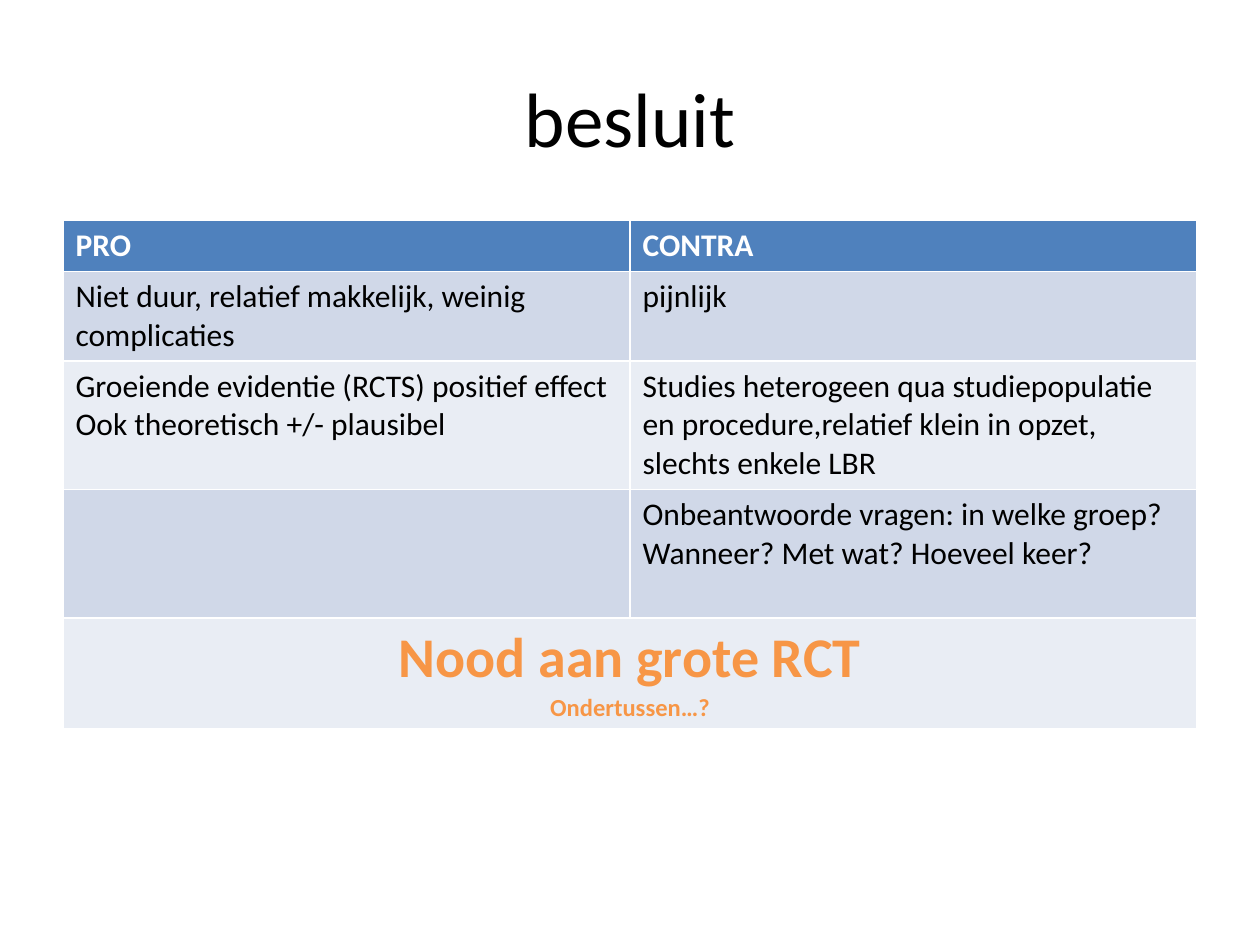
from pptx import Presentation
from pptx.dml.color import RGBColor
from pptx.enum import text
from pptx.util import Inches, Pt

TITLE = "besluit"
ROWS = [
    ("PRO", "CONTRA"),
    ("Niet duur, relatief makkelijk, weinig complicaties", "pijnlijk"),
    ("Groeiende evidentie (RCTS) positief effect\nOok theoretisch +/- plausibel",
     "Studies heterogeen qua studiepopulatie en procedure,relatief klein in opzet, "
     "slechts enkele LBR"),
    ("", "Onbeantwoorde vragen: in welke groep? Wanneer? Met wat? Hoeveel keer?"),
    ("Nood aan grote RCT\nOndertussen…?", ""),
]
HEIGHTS = [0.4, 0.71, 1.02, 1.02, 0.87]
CONCLUSION_SIZES = [32, 14]
COLORS = {"header": "4F81BD", "odd": "D0D8E8", "even": "E9EDF4",
          "white": "FFFFFF", "black": "000000", "accent": "F79646"}
FONT = "Calibri"


def rgb(name):
    return RGBColor.from_string(COLORS[name])


def format_paragraph(p, size, color, bold=False, align=text.PP_ALIGN.LEFT):
    p.alignment = align
    for r in p.runs:
        r.font.name = FONT
        r.font.size = Pt(size)
        r.font.bold = bold
        r.font.color.rgb = rgb(color)


def main():
    prs = Presentation()
    prs.slide_width, prs.slide_height = Inches(10), Inches(7.5)
    s = prs.slides.add_slide(prs.slide_layouts[5])

    title = s.shapes.title
    title.left, title.top = Inches(0.5), Inches(0.3)
    title.width, title.height = Inches(9), Inches(1.25)
    title.text_frame.text = TITLE
    title.text_frame.vertical_anchor = text.MSO_ANCHOR.MIDDLE
    format_paragraph(title.text_frame.paragraphs[0], 44, "black",
                     align=text.PP_ALIGN.CENTER)

    table = s.shapes.add_table(len(ROWS), 2, Inches(0.5), Inches(1.75),
                               Inches(9), Inches(sum(HEIGHTS))).table
    last = len(ROWS) - 1
    table.cell(last, 0).merge(table.cell(last, 1))

    for i, (row, height) in enumerate(zip(ROWS, HEIGHTS)):
        table.rows[i].height = Inches(height)
        fill = "header" if i == 0 else "odd" if i % 2 else "even"
        for j, content in enumerate(row):
            cell = table.cell(i, j)
            cell.fill.solid()
            cell.fill.fore_color.rgb = rgb(fill)
            if not content:
                continue
            cell.text_frame.text = content
            for k, p in enumerate(cell.text_frame.paragraphs):
                if i == last:
                    format_paragraph(p, CONCLUSION_SIZES[k], "accent", True,
                                     text.PP_ALIGN.CENTER)
                else:
                    format_paragraph(p, 18, "black" if i else "white", i == 0)

    prs.save("out.pptx")


if __name__ == "__main__":
    main()
